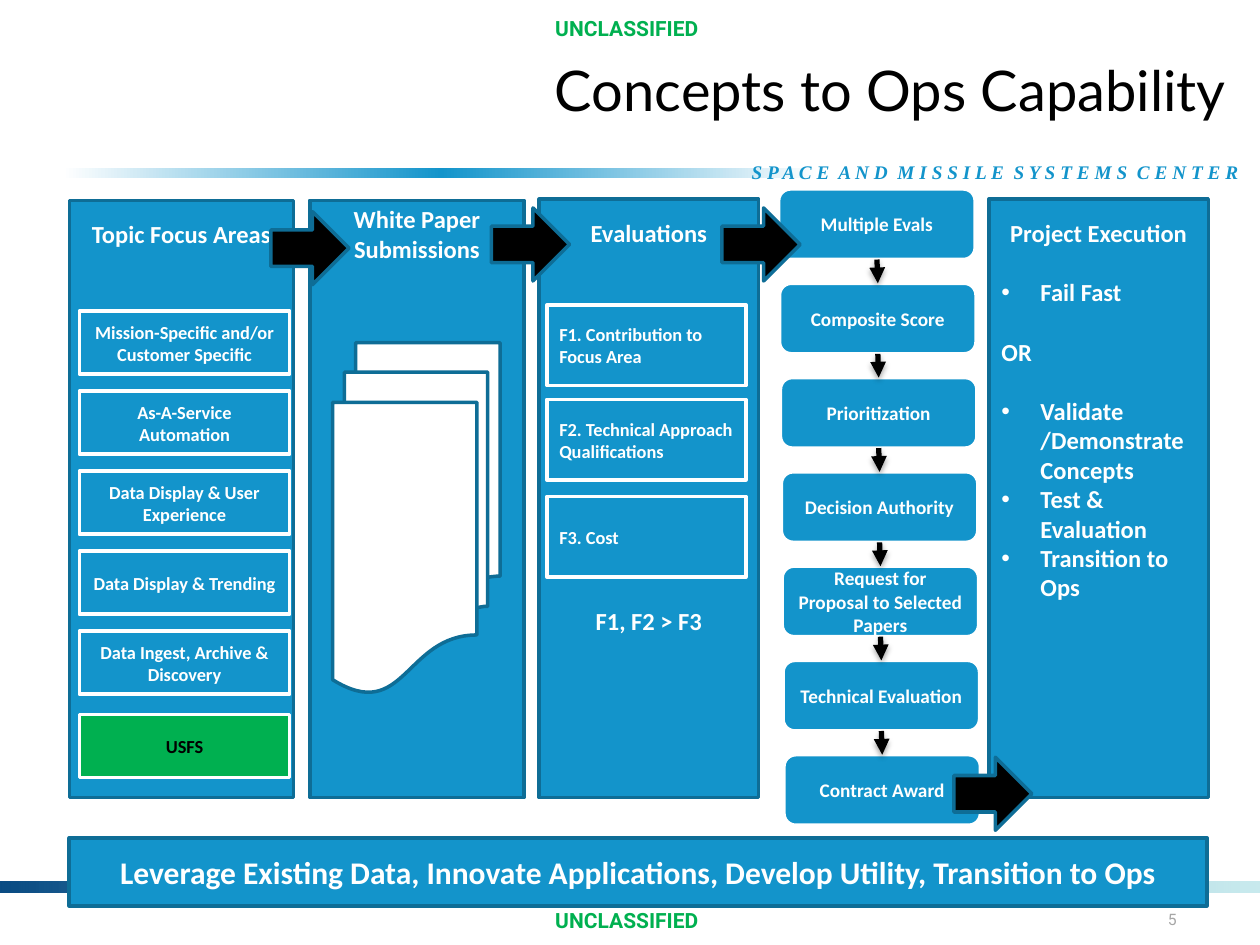
import pptx
import pptx.util
import pptx.oxml
from pptx.dml.color import RGBColor
from pptx.enum.shapes import MSO_CONNECTOR, MSO_SHAPE
from pptx.enum.text import MSO_ANCHOR, PP_ALIGN
from pptx.oxml.ns import nsdecls
from pptx.util import Inches, Pt

BLUE = RGBColor(0x13, 0x94, 0xCB)
EDGE = RGBColor(0x0E, 0x6D, 0x96)
WHITE = RGBColor(0xFF, 0xFF, 0xFF)
BLACK = RGBColor(0, 0, 0)
GREEN = RGBColor(0, 0xB0, 0x50)
GREY = RGBColor(0xA6, 0xA6, 0xA6)
NAVY = RGBColor(0x0A, 0x4C, 0x84)
TEAL = RGBColor(0x76, 0xCA, 0xD4)

HEADING = {"size": Pt(14), "name": "Calibri", "bold": True}
ITEM = {**HEADING, "size": Pt(10.5)}
STEP = {**HEADING, "size": Pt(11)}
BANNER = {**HEADING, "size": Pt(18)}
TITLE = {"size": Pt(32), "name": "Lato"}
MARKING = {"size": Pt(12), "name": "Roboto", "bold": True}
NUMBER = {"size": Pt(9), "name": "Roboto"}
CENTER_NAME = {"size": Pt(11), "name": "Times New Roman", "bold": True, "italic": True}
LINE = 17.1  # height in points of one 14 pt line


def write(p, text, style, color, align=PP_ALIGN.CENTER):
    p.alignment = align
    r = p.add_run()
    r.text = text
    for key, value in style.items():
        setattr(r.font, key, value)
    r.font.color.rgb = color


def add_box(slide, box, text="", style=HEADING, color=WHITE, fill=BLUE, line=EDGE,
            kind=MSO_SHAPE.RECTANGLE, align=PP_ALIGN.CENTER):
    sp = slide.shapes.add_shape(kind, *map(Inches, box))
    sp.shadow.inherit = False
    sp.fill.solid()
    sp.fill.fore_color.rgb = fill
    sp.line.color.rgb = line
    sp.line.width = Pt(2)
    tf = sp.text_frame
    tf.word_wrap = True
    tf.vertical_anchor = MSO_ANCHOR.MIDDLE
    if text:
        write(tf.paragraphs[0], text, style, color, align)
    return sp


def add_label(slide, box, text, style, color, align=PP_ALIGN.CENTER, wrap=True):
    tf = slide.shapes.add_textbox(*map(Inches, box)).text_frame
    tf.word_wrap = wrap
    tf.vertical_anchor = MSO_ANCHOR.MIDDLE
    write(tf.paragraphs[0], text, style, color, align)


def add_gradient_bar(slide, box, stops):
    """Fill a thin bar from left to right; stops are (percent, colour, opacity)."""
    sp = slide.shapes.add_shape(MSO_SHAPE.RECTANGLE, *map(Inches, box))
    sp.shadow.inherit = False
    sp.line.fill.background()
    sp.fill.gradient()
    sp.fill.gradient_angle = 0
    gs_list = sp.fill._fill._gradFill.gsLst
    for gs in list(gs_list):
        gs_list.remove(gs)
    for pos, color, opacity in stops:
        gs_list.append(pptx.oxml.parse_xml(
            f'<a:gs {nsdecls("a")} pos="{pos * 1000}"><a:srgbClr val="{color}">'
            f'<a:alpha val="{opacity * 1000}"/></a:srgbClr></a:gs>'))


def add_panel(slide, box, heading, top_inset=0.15):
    sp = add_box(slide, box, heading)
    sp.text_frame.vertical_anchor = MSO_ANCHOR.TOP
    sp.text_frame.margin_top = Inches(top_inset)
    return sp.text_frame


def add_arrow(slide, left, top):
    add_box(slide, (left, top, 0.62, 0.58), fill=BLACK, kind=MSO_SHAPE.RIGHT_ARROW)


def add_step_link(slide, upper, lower):
    line = slide.shapes.add_connector(MSO_CONNECTOR.STRAIGHT, 0, 0, 0, 0)
    line.begin_connect(upper, 2)
    line.end_connect(lower, 0)
    line.line.color.rgb = BLACK
    line.line.width = Pt(3)
    line.line._get_or_add_ln().append(
        pptx.oxml.parse_xml(f'<a:tailEnd {nsdecls("a")} type="triangle"/>'))
    line._element.spPr.append(pptx.oxml.parse_xml(
        f'<a:effectLst {nsdecls("a")}><a:outerShdw blurRad="{Pt(3.1)}" dist="{Pt(1.8)}" '
        'dir="5400000" rotWithShape="0"><a:srgbClr val="000000"><a:alpha val="35000"/>'
        '</a:srgbClr></a:outerShdw></a:effectLst>'))


def add_frame(slide):
    """Header, footer and classification markings."""
    add_gradient_bar(slide, (0, 7, 10, 0.08), [(0, NAVY, 100), (100, TEAL, 40)])
    add_gradient_bar(slide, (0.5, 1.33, 6, 0.08),
                     [(0, WHITE, 100), (50, BLUE, 100), (100, WHITE, 100)])
    add_label(slide, (9.17, 7.17, 0.36, 0.25), "5", NUMBER, GREY, PP_ALIGN.LEFT, False)
    add_label(slide, (5.75, 1.22, 4.18, 0.29),
              "S P A C E  A N D  M I S S I L E  S Y S T E M S  C E N T E R",
              CENTER_NAME, BLUE, PP_ALIGN.RIGHT)
    add_label(slide, (1.74, 0.08, 8.09, 1.25), "Concepts to Ops Capability",
              TITLE, BLACK, PP_ALIGN.RIGHT)


def add_topics(slide, box):
    add_panel(slide, box, "Topic Focus Areas")
    left, top = box[:2]
    topics = ["Mission-Specific and/or Customer Specific", "As-A-Service Automation",
              "Data Display & User Experience", "Data Display & Trending",
              "Data Ingest, Archive & Discovery"]
    for i, topic in enumerate(topics):
        add_box(slide, (left + 0.08, top + 0.88 + 0.635 * i, 1.67, 0.5), topic, ITEM, line=WHITE)
    add_box(slide, (left + 0.08, top + 4.08, 1.67, 0.5), "USFS", ITEM, BLACK, GREEN, WHITE)


def add_papers(slide, box):
    add_panel(slide, box, "White Paper Submissions", 0.03)
    add_box(slide, (box[0] + 0.18, box[1] + 1.13, 1.33, 2.78), fill=WHITE,
            kind=MSO_SHAPE.FLOWCHART_MULTIDOCUMENT)


def add_evaluations(slide, box):
    tf = add_panel(slide, box, "Evaluations")
    p = tf.add_paragraph()
    p.space_before = Pt(12 * LINE)
    write(p, "F1, F2 > F3", HEADING, WHITE)
    factors = [(0.84, "F1. Contribution to Focus Area"),
               (1.59, "F2. Technical Approach Qualifications"), (2.36, "F3. Cost")]
    for offset, factor in factors:
        add_box(slide, (box[0] + 0.06, box[1] + offset, 1.58, 0.64), factor, ITEM,
                line=WHITE, align=PP_ALIGN.LEFT)


def add_steps(slide, box):
    """Stack the steps down the box, each a little further right, and link them."""
    left, top, width, height = box
    steps = ["Multiple Evals", "Composite Score", "Prioritization", "Decision Authority",
             "Request for Proposal to Selected Papers", "Technical Evaluation", "Contract Award"]
    step_height = 0.56
    pitch = (height - step_height) / (len(steps) - 1)
    shapes = [add_box(slide, (left + 0.007 * i, top + pitch * i, width, step_height), step, STEP,
                      line=WHITE, kind=MSO_SHAPE.FLOWCHART_ALTERNATE_PROCESS)
              for i, step in enumerate(steps)]
    for upper, lower in zip(shapes, shapes[1:]):
        add_step_link(slide, upper, lower)


def add_execution(slide, box):
    tf = add_panel(slide, box, "Project Execution")
    lines = [("Fail Fast", True, 1), ("OR", False, 1), ("Validate /Demonstrate Concepts", True, 1),
             ("Test & Evaluation", True, 0), ("Transition to Ops", True, 0)]
    for text, bulleted, gap in lines:
        p = tf.add_paragraph()
        p.space_before = Pt(gap * LINE)
        if bulleted:
            pPr = p._p.get_or_add_pPr()
            pPr.set("marL", str(Inches(0.31)))
            pPr.set("indent", str(-Inches(0.31)))
            pPr.append(pptx.oxml.parse_xml(f'<a:buFont {nsdecls("a")} typeface="Arial"/>'))
            pPr.append(pptx.oxml.parse_xml(f'<a:buChar {nsdecls("a")} char="•"/>'))
        write(p, text, HEADING, WHITE, PP_ALIGN.LEFT)


def main():
    prs = pptx.Presentation()
    prs.slide_width, prs.slide_height = Inches(10), Inches(7.5)
    slide = prs.slides.add_slide(prs.slide_layouts[6])
    add_frame(slide)
    add_topics(slide, (0.55, 1.59, 1.78, 4.74))
    add_papers(slide, (2.46, 1.59, 1.7, 4.74))
    add_evaluations(slide, (4.28, 1.58, 1.74, 4.75))
    add_steps(slide, (6.18, 1.5, 1.56, 5.05))
    add_execution(slide, (7.85, 1.58, 1.74, 4.75))
    for left, top in [(2.15, 1.68), (3.9, 1.65), (5.73, 1.65), (7.57, 6.01)]:
        add_arrow(slide, left, top)
    add_box(slide, (0.55, 6.65, 9.03, 0.54),
            "Leverage Existing Data, Innovate Applications, Develop Utility, Transition to Ops", BANNER)
    for top in (0.02, 7.1):
        add_label(slide, (3.39, top, 3.17, 0.4), "UNCLASSIFIED", MARKING, GREEN)
    prs.save("out.pptx")


if __name__ == "__main__":
    main()
